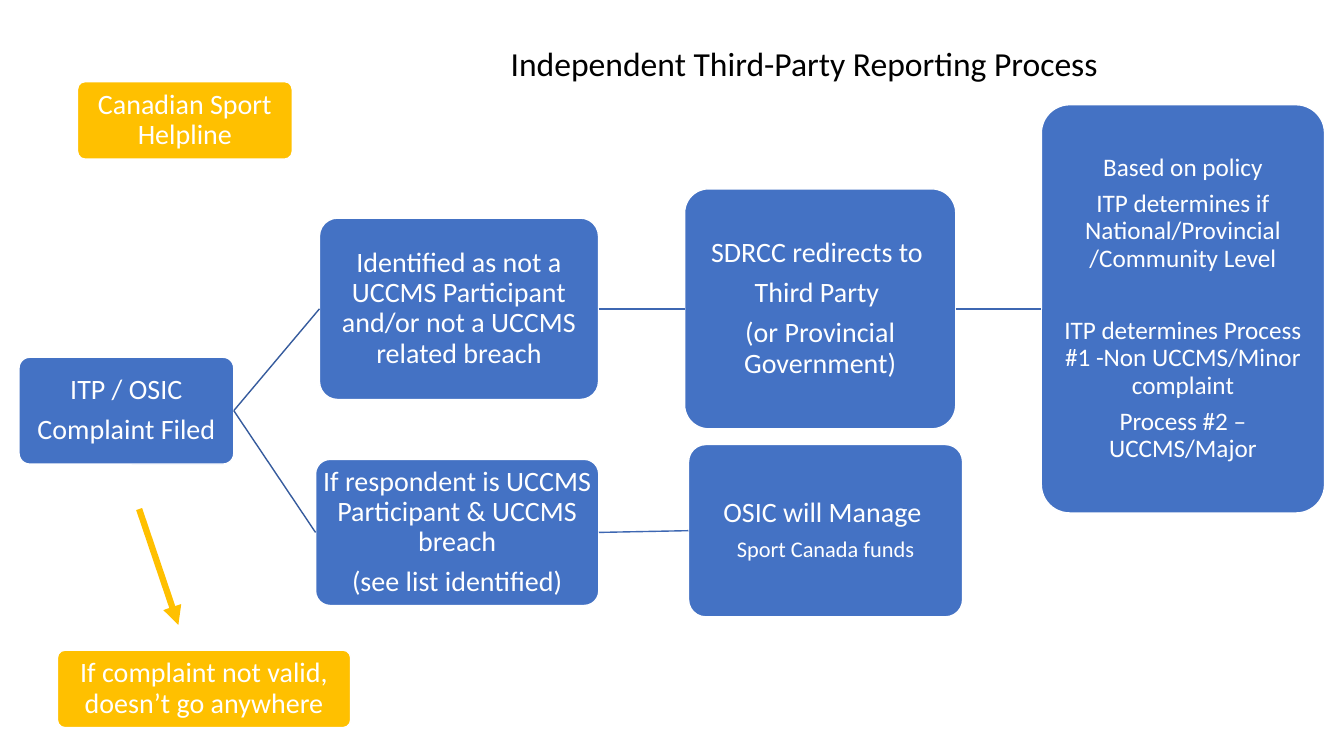
from pptx import Presentation
from pptx.dml.color import RGBColor
from pptx.enum.shapes import MSO_CONNECTOR as Connector, MSO_SHAPE as Shape
from pptx.enum.text import MSO_ANCHOR as Anchor, MSO_AUTO_SIZE as AutoSize, PP_ALIGN as Align
from pptx.oxml.ns import qn
from pptx.util import Pt
from lxml.etree import SubElement

BLACK = RGBColor(0x00, 0x00, 0x00)
WHITE = RGBColor(0xFF, 0xFF, 0xFF)
BLUE = RGBColor(0x44, 0x72, 0xC4)
GOLD = RGBColor(0xFF, 0xC0, 0x00)
DARK_LINK = RGBColor(0x36, 0x5B, 0x9D)
LINK = RGBColor(0x3E, 0x67, 0xB2)

FONT = "Calibri"
BLANK_LINE = 26
TITLE_BOX = (321, 27, 507, 36)

STEPS = {
    "complaint": ((13.6, 255.2, 153.4, 76.3), BLUE,
                  [("ITP / OSIC", 20, 0), ("Complaint Filed", 20, 0)]),
    "not participant": ((228.2, 155.8, 199.4, 129.6), BLUE,
                        [("Identified as not a UCCMS Participant and/or not a "
                          "UCCMS related breach", 20, 0)]),
    "redirect": ((489, 134.9, 193.7, 171.4), BLUE,
                 [("SDRCC redirects to ", 20, 0), ("Third Party ", 20, 0),
                  ("(or Provincial Government)", 20, 0)]),
    "policy": ((743.8, 74.8, 202.3, 291.6), BLUE,
               [("Based on policy", 18, 0),
                ("ITP determines if National/Provincial /Community Level", 18, 0),
                ("ITP determines Process #1 -Non UCCMS/Minor complaint", 18, BLANK_LINE),
                ("Process #2 – UCCMS/Major", 18, 0)]),
    "participant": ((225.4, 328.1, 202.3, 104.4), BLUE,
                    [("If respondent is UCCMS Participant & UCCMS breach", 20, 0),
                     ("(see list identified)", 20, 0)]),
    "managed": ((491.8, 317.5, 195.8, 123.1), BLUE,
                [("OSIC will Manage ", 20, 0), ("Sport Canada funds", 16, 0)]),
    "not valid": ((41, 464.4, 209.5, 55.4), GOLD,
                  [("If complaint not valid, doesn’t go anywhere", 20, 0)]),
    "helpline": ((55.4, 58.3, 153.4, 55.4), GOLD,
                 [("Canadian Sport Helpline", 20, 0)]),
}

LINKS = [
    ("complaint", "not participant", DARK_LINK),
    ("not participant", "redirect", LINK),
    ("redirect", "policy", LINK),
    ("complaint", "participant", DARK_LINK),
    ("participant", "managed", LINK),
]


def add_span(para, text, size, color):
    """Add one formatted run to a centred paragraph."""
    para.alignment = Align.CENTER
    span = para.add_run()
    span.text = text
    span.font.name = FONT
    span.font.size = Pt(size)
    span.font.color.rgb = color


def add_title(page, box, text):
    """Move the title placeholder into the box and write the title."""
    title = page.shapes.title
    title.left, title.top, title.width, title.height = map(Pt, box)
    frame = title.text_frame
    frame.word_wrap = True
    frame.auto_size = AutoSize.NONE
    frame.vertical_anchor = Anchor.TOP
    para = frame.paragraphs[0]
    para.line_spacing = 1.0
    para.space_before = Pt(0)
    add_span(para, text, 24, BLACK)


def add_step(page, box, color, lines):
    """Draw a rounded step that fills the box, with its centred lines."""
    step = page.shapes.add_shape(Shape.ROUNDED_RECTANGLE, *map(Pt, box))
    step.adjustments[0] = 0.1
    step.shadow.inherit = False
    step.fill.solid()
    step.fill.fore_color.rgb = color
    step.line.color.rgb = WHITE
    step.line.width = Pt(1)
    frame = step.text_frame
    frame.word_wrap = True
    frame.vertical_anchor = Anchor.MIDDLE
    frame.margin_left = frame.margin_right = Pt(0.7)
    frame.margin_top = frame.margin_bottom = Pt(0.7)
    for index, (text, size, gap) in enumerate(lines):
        para = frame.add_paragraph() if index else frame.paragraphs[0]
        para.line_spacing = 0.9
        para.space_before = Pt(gap)
        para.space_after = Pt(0.35 * size)
        add_span(para, text, size, WHITE)
    return step


def add_line(page, ends, color, width):
    """Draw a straight line without a shadow."""
    line = page.shapes.add_connector(Connector.STRAIGHT, *map(Pt, ends))
    line.line.color.rgb = color
    line.line.width = Pt(width)
    SubElement(line._element.spPr, qn("a:effectLst"))
    return line


def join_steps(page, source, target, color):
    """Link the right side of one step to the left side of the next."""
    link = add_line(page, (0, 0, 0, 0), color, 1)
    link.begin_connect(source, 3)
    link.end_connect(target, 1)


def add_arrow(page, ends):
    """Draw the thick arrow towards the complaint that is not valid."""
    arrow = add_line(page, ends, GOLD, 4.5)
    SubElement(arrow.line._get_or_add_ln(), qn("a:tailEnd"), type="triangle")


def add_process(page):
    """Build the steps, their links and the arrow."""
    steps = {name: add_step(page, *details) for name, details in STEPS.items()}
    for source, target, color in LINKS:
        join_steps(page, steps[source], steps[target], color)
    add_arrow(page, (99.4, 363.6, 127.4, 446.4))


def main():
    """Create the deck and save it."""
    deck = Presentation()
    deck.slide_width, deck.slide_height = Pt(960), Pt(540)
    page = deck.slides.add_slide(deck.slide_layouts[5])
    add_title(page, TITLE_BOX, "Independent Third-Party Reporting Process")
    add_process(page)
    deck.save("out.pptx")


if __name__ == "__main__":
    main()
